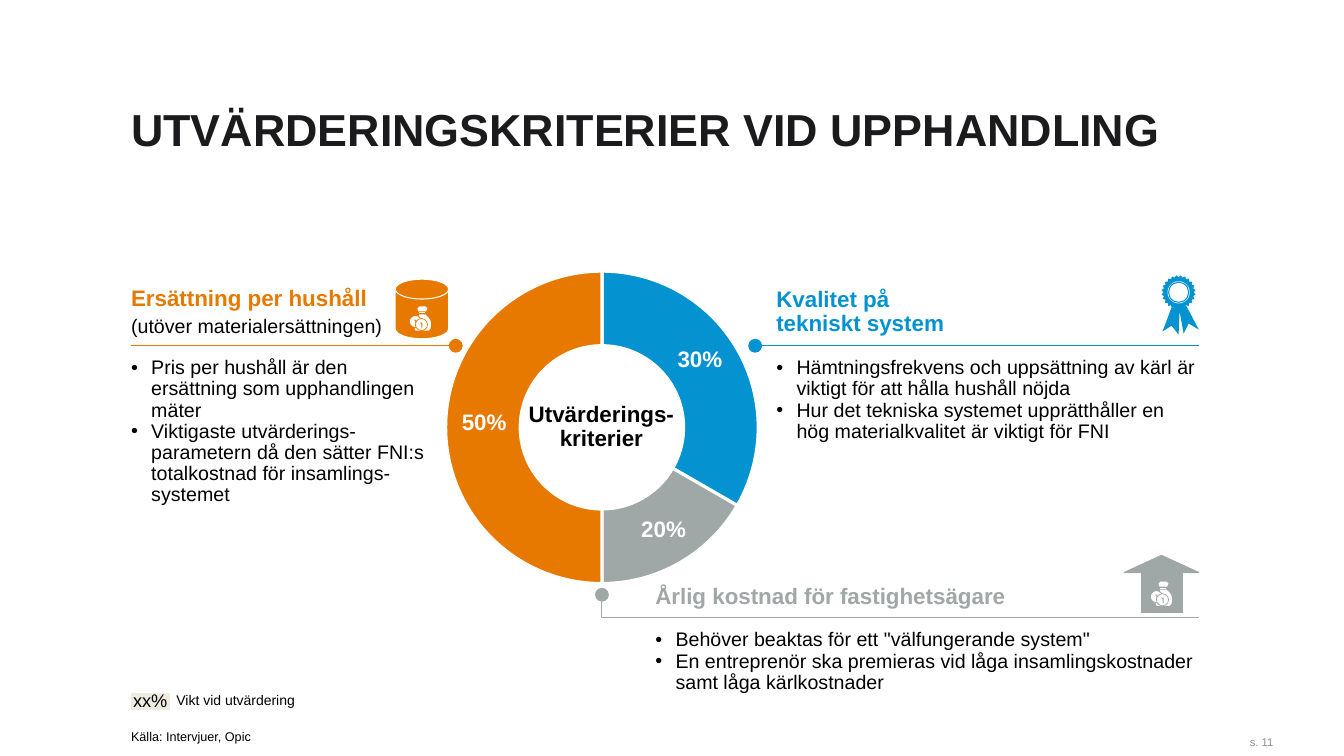
"""Build a slide with a ring of three weighted procurement criteria."""
from math import cos, radians, sin

from lxml.etree import SubElement
from pptx import Presentation
from pptx.dml.color import RGBColor
from pptx.enum.shapes import MSO_CONNECTOR as Connector, MSO_SHAPE as Shape
from pptx.enum.text import MSO_ANCHOR as Anchor, MSO_AUTO_SIZE as AutoSize, PP_ALIGN as Align
from pptx.oxml.ns import qn
from pptx.util import Pt

PX = 9144
COLORS = {
    "orange": "E77900", "blue": "0492D0", "gray": "9FA7A7", "white": "FFFFFF",
    "black": "000000", "title": "1B1B1D", "page": "8C8C8C", "beige": "EEECE1",
}


def color(name):
    return RGBColor.from_string(COLORS[name])


def polar(center, radius, angle):
    return (center[0] + radius * cos(radians(angle)),
            center[1] + radius * sin(radians(angle)))


def write(frame, text, size=14, ink="black", bold=False, align=Align.LEFT,
          spacing=0.9, before=0, bullet=False):
    paragraph = frame.paragraphs[0] if not frame.text else frame.add_paragraph()
    paragraph.alignment = align
    paragraph.line_spacing = spacing
    paragraph.space_before = Pt(before)
    if bullet:
        properties = paragraph._p.get_or_add_pPr()
        properties.set("marL", str(20 * PX))
        properties.set("indent", str(-20 * PX))
        SubElement(properties, qn("a:buFont")).set("typeface", "Arial")
        SubElement(properties, qn("a:buChar")).set("char", "•")
    run = paragraph.add_run()
    run.text = text
    run.font.name = "Arial"
    run.font.size = Pt(size)
    run.font.bold = bold
    run.font.color.rgb = color(ink)


class Canvas:
    def __init__(self, slide):
        self.slide = slide
        self.shapes = slide.shapes

    def place(self, shape, left, top, width, height):
        shape.left, shape.top = left * PX, top * PX
        shape.width, shape.height = width * PX, height * PX

    def frame(self, shape, anchor=Anchor.TOP, above=0, below=0, wrap=True):
        frame = shape.text_frame
        frame.auto_size = AutoSize.NONE
        frame.word_wrap = wrap
        frame.vertical_anchor = anchor
        frame.margin_left = frame.margin_right = 0
        frame.margin_top, frame.margin_bottom = above * PX, below * PX
        return frame

    def title(self, text, *box):
        self.place(self.shapes.title, *box)
        write(self.frame(self.shapes.title), text, size=32, ink="title", bold=True, spacing=1.0)

    def textbox(self, *box, **layout):
        shape = self.shapes.add_textbox(*(length * PX for length in box))
        return self.frame(shape, **layout)

    def label(self, text, *box, **style):
        write(self.textbox(*box, wrap=False), text, **style)

    def heading(self, text, *box, ink):
        frame = self.textbox(*box, anchor=Anchor.BOTTOM, below=8)
        write(frame, text, size=16, ink=ink, bold=True)
        return frame

    def bullets(self, items, *box):
        frame = self.textbox(*box, above=12)
        for item in items:
            write(frame, item, bullet=True)

    def paint(self, shape, fill, line=None, weight=0.75):
        shape.shadow.inherit = False
        if fill:
            shape.fill.solid()
            shape.fill.fore_color.rgb = color(fill)
        else:
            shape.fill.background()
        if line:
            shape.line.color.rgb = color(line)
            shape.line.width = Pt(weight)
        else:
            shape.line.fill.background()
        return shape

    def preset(self, kind, left, top, width, height, fill, line=None, weight=0.75):
        box = (length * PX for length in (left, top, width, height))
        return self.paint(self.shapes.add_shape(kind, *box), fill, line, weight)

    def disc(self, center, radius, fill, line=None, weight=0.75):
        left, top = center[0] - radius, center[1] - radius
        return self.preset(Shape.OVAL, left, top, 2 * radius, 2 * radius, fill, line, weight)

    def outline(self, points, fill, line=None, weight=0.75, close=True):
        points = [(round(x * PX), round(y * PX)) for x, y in points]
        builder = self.shapes.build_freeform(*points[0], scale=1.0)
        builder.add_line_segments(points[1:], close=close)
        return self.paint(builder.convert_to_shape(), fill, line, weight)

    def sector(self, start, end, fill):
        center, outer, inner = (597, 424), 155, 81
        angles = range(start, end + 1, 2)
        points = [polar(center, outer, angle) for angle in angles]
        points += [polar(center, inner, angle) for angle in reversed(angles)]
        self.outline(points, fill, "white", 2.25)

    def oval_end(self, shape):
        tail = SubElement(shape.line._get_or_add_ln(), qn("a:tailEnd"))
        for key, value in (("type", "oval"), ("w", "lg"), ("len", "lg")):
            tail.set(key, value)

    def rule(self, start, end, y, ink):
        line = self.shapes.add_connector(
            Connector.STRAIGHT, start * PX, y * PX, end * PX, y * PX)
        line.line.color.rgb = color(ink)
        line.line.width = Pt(0.75)
        SubElement(line._element.spPr, qn("a:effectLst"))
        self.oval_end(line)

    def elbow(self, points, ink):
        self.oval_end(self.outline(points, None, ink, close=False))

    def money_bag(self, left, top, back):
        def moved(points):
            return [(left + x, top + y) for x, y in points]

        body = [(9, 8), (15, 8), (18, 11), (20, 14), (20.5, 18), (20, 22), (18, 24), (5, 24), (4, 21)]
        neck = [(8, 5), (7, 2), (9, 0), (15, 0), (17, 2), (15.5, 5)]
        one = [(-1, -2), (1, -2), (1, 3), (0, 3), (0, -1), (-1, -1)]
        self.outline(moved(body), "white")
        self.outline(moved(neck), "white")
        self.outline(moved([(9, 6), (15, 6), (15, 7), (9, 7)]), "white")
        for x, y, radius in ((5, 15, 6), (11, 18, 6)):
            self.disc((left + x, top + y), radius, "white", back, 0.5)
            self.outline(moved([(x + dx, y + dy) for dx, dy in one]), back)

    def rosette(self, center):
        x, y = center
        ribbon = [(-7, 15), (-16, 39), (-7, 33), (0, 42), (1, 19), (5, 41), (10, 31), (20, 37), (8, 14)]
        self.outline([(x + dx, y + dy) for dx, dy in ribbon], "blue")
        edge = [polar(center, 17 if step % 2 else 15, step * 7.5) for step in range(48)]
        self.outline(edge, "blue")
        self.disc(center, 11, "white")
        self.disc(center, 10, "white", "blue")


def main():
    presentation = Presentation()
    presentation.slide_width, presentation.slide_height = 1333 * PX, 750 * PX
    canvas = Canvas(presentation.slides.add_slide(presentation.slide_layouts[5]))

    canvas.title("UTVÄRDERINGSKRITERIER VID UPPHANDLING", 130, 101, 1049, 63)

    for start, end, fill in ((-90, 30, "blue"), (30, 90, "gray"), (90, 270, "orange")):
        canvas.sector(start, end, fill)
    for text, left, top in (("30%", 672, 333), ("20%", 636, 502), ("50%", 458, 396)):
        frame = canvas.textbox(left, top, 48, 36, above=12, wrap=False)
        write(frame, text, size=16, ink="white", bold=True)
    center = canvas.textbox(515, 342, 163, 163, anchor=Anchor.MIDDLE)
    write(center, "Utvärderings-kriterier", size=16, bold=True, align=Align.CENTER)

    canvas.rule(130, 452, 343, "orange")
    canvas.rule(1189, 749, 343, "blue")
    canvas.elbow([(1189, 613), (597, 613), (597, 590)], "gray")

    price = canvas.heading("Ersättning per hushåll", 130, 284, 321, 59, ink="orange")
    write(price, "(utöver materialersättningen)", before=4)
    canvas.heading("Kvalitet på tekniskt system", 770, 286, 186, 56, ink="blue")
    canvas.heading("Årlig kostnad för fastighetsägare", 650, 581, 413, 32, ink="gray")

    canvas.bullets(["Pris per hushåll är den ersättning som upphandlingen mäter",
                    "Viktigaste utvärderings-parametern då den sätter FNI:s "
                    "totalkostnad för insamlings-systemet"], 130, 343, 305, 139)
    canvas.bullets(["Hämtningsfrekvens och uppsättning av kärl är viktigt för att hålla hushåll nöjda",
                    "Hur det tekniska systemet upprätthåller en hög materialkvalitet "
                    "är viktigt för FNI"], 770, 343, 419, 97)
    canvas.bullets(["Behöver beaktas för ett \"välfungerande system\"",
                    "En entreprenör ska premieras vid låga insamlingskostnader "
                    "samt låga kärlkostnader"], 650, 613, 539, 76)

    canvas.preset(Shape.FLOWCHART_MAGNETIC_DISK, 392, 277, 53, 59, "orange", "white")
    canvas.money_bag(407, 304, "orange")
    canvas.rosette((1169, 290))
    canvas.preset(Shape.RECTANGLE, 1132, 567, 41, 41, "gray", "gray")
    canvas.preset(Shape.ISOSCELES_TRIANGLE, 1115, 551, 74, 17, "gray", "gray")
    canvas.money_bag(1142, 577, "gray")

    legend = canvas.preset(Shape.RECTANGLE, 130, 688, 38, 16, "beige", "beige")
    write(canvas.frame(legend, anchor=Anchor.MIDDLE), "xx%", size=13, align=Align.CENTER)
    canvas.label("Vikt vid utvärdering", 175, 688, 119, 15, size=10)
    canvas.label("Källa: Intervjuer, Opic", 130, 725, 121, 14, size=9)
    page = canvas.textbox(1130, 721, 133, 30, anchor=Anchor.MIDDLE)
    write(page, "s. 11", size=8, ink="page", align=Align.RIGHT, spacing=1.0)

    presentation.save("out.pptx")


if __name__ == "__main__":
    main()
